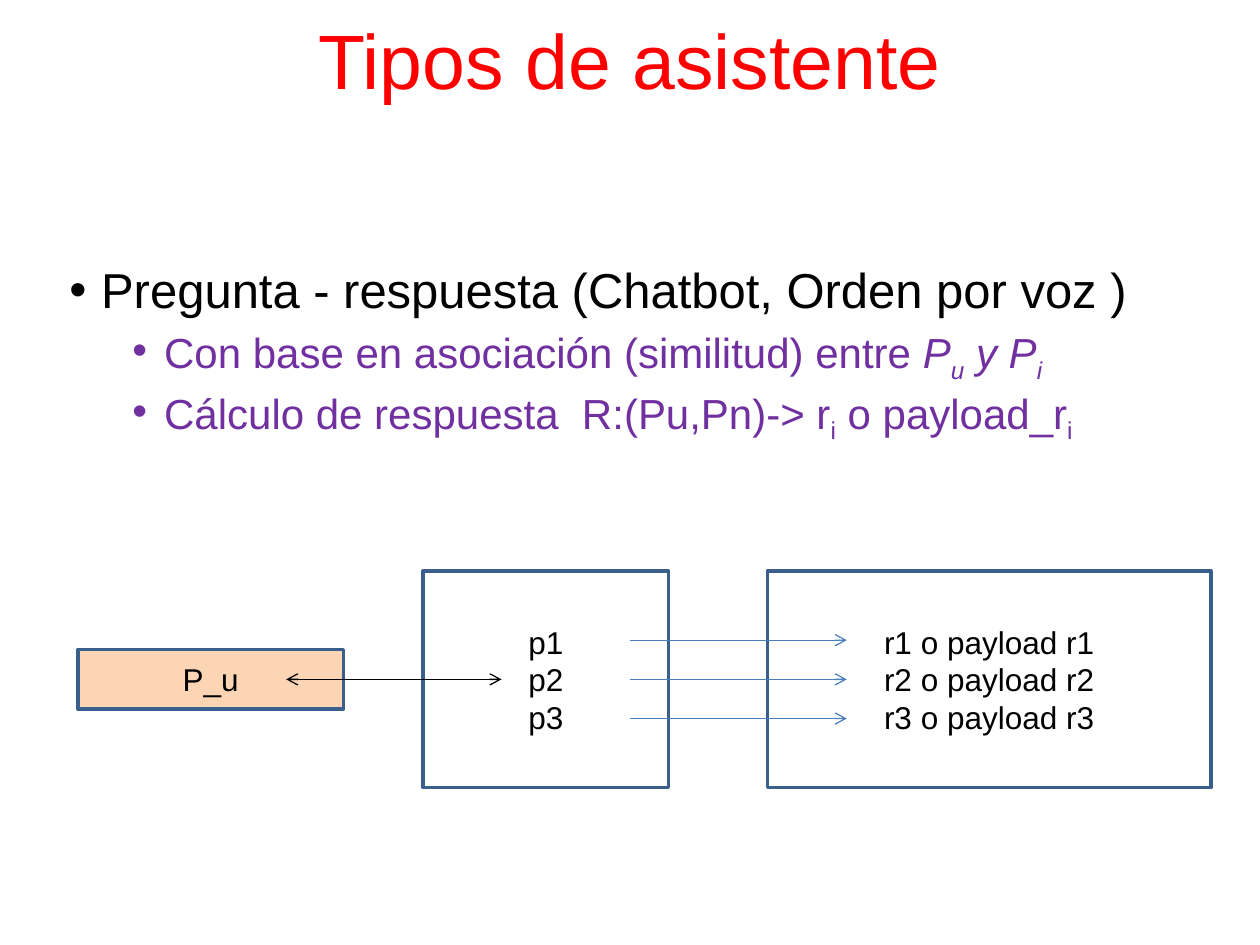
import pptx
import pptx.util
import pptx.dml.color
import pptx.enum.shapes
import pptx.enum.text
import pptx.oxml.ns
import lxml.etree

Cm = pptx.util.Cm
Pt = pptx.util.Pt
RGBColor = pptx.dml.color.RGBColor
PP_ALIGN = pptx.enum.text.PP_ALIGN
MSO_ANCHOR = pptx.enum.text.MSO_ANCHOR

RED = RGBColor(0xFF, 0x00, 0x00)
BLACK = RGBColor(0x00, 0x00, 0x00)
WHITE = RGBColor(0xFF, 0xFF, 0xFF)
PURPLE = RGBColor(0x70, 0x30, 0xA0)
PEACH = RGBColor(0xFC, 0xD5, 0xB5)
BORDER_BLUE = RGBColor(0x3A, 0x5F, 0x8C)
ARROW_BLUE = RGBColor(0x4B, 0x7E, 0xBC)

# Paragraphs: level, size, colour, runs of (text, italic, subscript)
BODY = [
    (0, 28, BLACK, [("Pregunta - respuesta (Chatbot, Orden por voz )", False, False)]),
    (1, 24, PURPLE, [("Con base en asociación (similitud) entre ", False, False),
                     ("P", True, False), ("u", True, True),
                     (" y P", True, False), ("i", True, True)]),
    (1, 24, PURPLE, [("Cálculo de respuesta  R:(Pu,Pn)-> r", False, False), ("i", False, True),
                     (" o payload_r", False, False), ("i", False, True)]),
]


def add_child(parent, tag, **attributes):
    return lxml.etree.SubElement(parent, pptx.oxml.ns.qn(tag), **attributes)


def set_format(target, values):
    for name, value in values.items():
        setattr(target, name, value)


def add_run(paragraph, text, size, color, italic=False, subscript=False):
    run = paragraph.add_run()
    run.text = text
    set_format(run.font, {"name": "Arial", "size": Pt(size), "italic": italic})
    run.font.color.rgb = color
    if subscript:
        run._r.get_or_add_rPr().set("baseline", "-25000")


def add_text_box(slide, box, anchor):
    frame = slide.shapes.add_textbox(*map(Cm, box)).text_frame
    set_format(frame, {"word_wrap": True, "vertical_anchor": anchor, "margin_left": 0,
                       "margin_right": 0, "margin_top": 0, "margin_bottom": 0})
    return frame


def add_title(slide, box, text):
    paragraph = add_text_box(slide, box, MSO_ANCHOR.MIDDLE).paragraphs[0]
    set_format(paragraph, {"alignment": PP_ALIGN.CENTER, "line_spacing": 0.9})
    add_run(paragraph, text, 44, RED)


def add_body(slide, box, items):
    frame = add_text_box(slide, box, MSO_ANCHOR.TOP)
    for index, (level, size, color, runs) in enumerate(items):
        paragraph = frame.add_paragraph() if index else frame.paragraphs[0]
        set_format(paragraph, {"level": level, "line_spacing": 0.9,
                               "space_before": Pt(5 if level else 10)})
        # Hanging bullet
        properties = paragraph._p.get_or_add_pPr()
        properties.set("marL", str(Cm(1.91 if level else 0.64)))
        properties.set("indent", str(-Cm(0.64)))
        add_child(properties, "a:buFont", typeface="Arial")
        add_child(properties, "a:buChar", char="•")
        for text, italic, subscript in runs:
            add_run(paragraph, text, size, color, italic, subscript)


def add_node(shapes, box, lines, fill):
    shape = shapes.add_shape(pptx.enum.shapes.MSO_SHAPE.RECTANGLE, *map(Cm, box))
    shape.shadow.inherit = False
    shape.fill.solid()
    shape.fill.fore_color.rgb = fill
    shape.line.color.rgb = BORDER_BLUE
    shape.line.width = Pt(2)
    frame = shape.text_frame
    set_format(frame, {"word_wrap": True, "vertical_anchor": MSO_ANCHOR.MIDDLE})
    for index, text in enumerate(lines):
        paragraph = frame.add_paragraph() if index else frame.paragraphs[0]
        paragraph.alignment = PP_ALIGN.CENTER
        add_run(paragraph, text, 18, BLACK)


def add_arrow(shapes, start, end, y, color, ends):
    arrow = shapes.add_connector(pptx.enum.shapes.MSO_CONNECTOR.STRAIGHT,
                                 Cm(start), Cm(y), Cm(end), Cm(y))
    arrow.line.color.rgb = color
    arrow.line.width = Pt(0.75)
    for tag in ends:
        add_child(arrow.line._get_or_add_ln(), tag, type="arrow")
    add_child(arrow._element.spPr, "a:effectLst")


def add_matching_diagram(slide, box):
    left, top, width, height = box
    middle = top + height / 2
    group = slide.shapes.add_group_shape().shapes
    numbers = (1, 2, 3)

    # User phrase, known phrases and answers
    add_node(group, (left, middle - 0.6, 5.36, 1.2), ["P_u"], PEACH)
    add_node(group, (left + 6.96, top, 4.95, height), [f"p{n}" for n in numbers], WHITE)
    add_node(group, (left + 13.9, top, width - 13.9, height),
             [f"r{n} o payload r{n}" for n in numbers], WHITE)

    # Each known phrase leads to its answer
    for n in numbers:
        add_arrow(group, left + 11.13, left + 15.5, middle + (n - 2) * 0.79,
                  ARROW_BLUE, ["a:tailEnd"])

    # Similarity between user phrase and known phrases
    add_arrow(slide.shapes, left + 4.2, left + 8.54, middle, BLACK, ["a:headEnd", "a:tailEnd"])


def main():
    presentation = pptx.Presentation()
    set_format(presentation, {"slide_width": Cm(25.4), "slide_height": Cm(19.05)})
    slide = presentation.slides.add_slide(presentation.slide_layouts[6])
    add_title(slide, (0, 0, 25.4, 2.62), "Tipos de asistente")
    add_body(slide, (1.4, 5.36, 22.86, 3.58), BODY)
    add_matching_diagram(slide, (1.57, 11.51, 22.84, 4.37))
    presentation.save("out.pptx")


if __name__ == "__main__":
    main()
